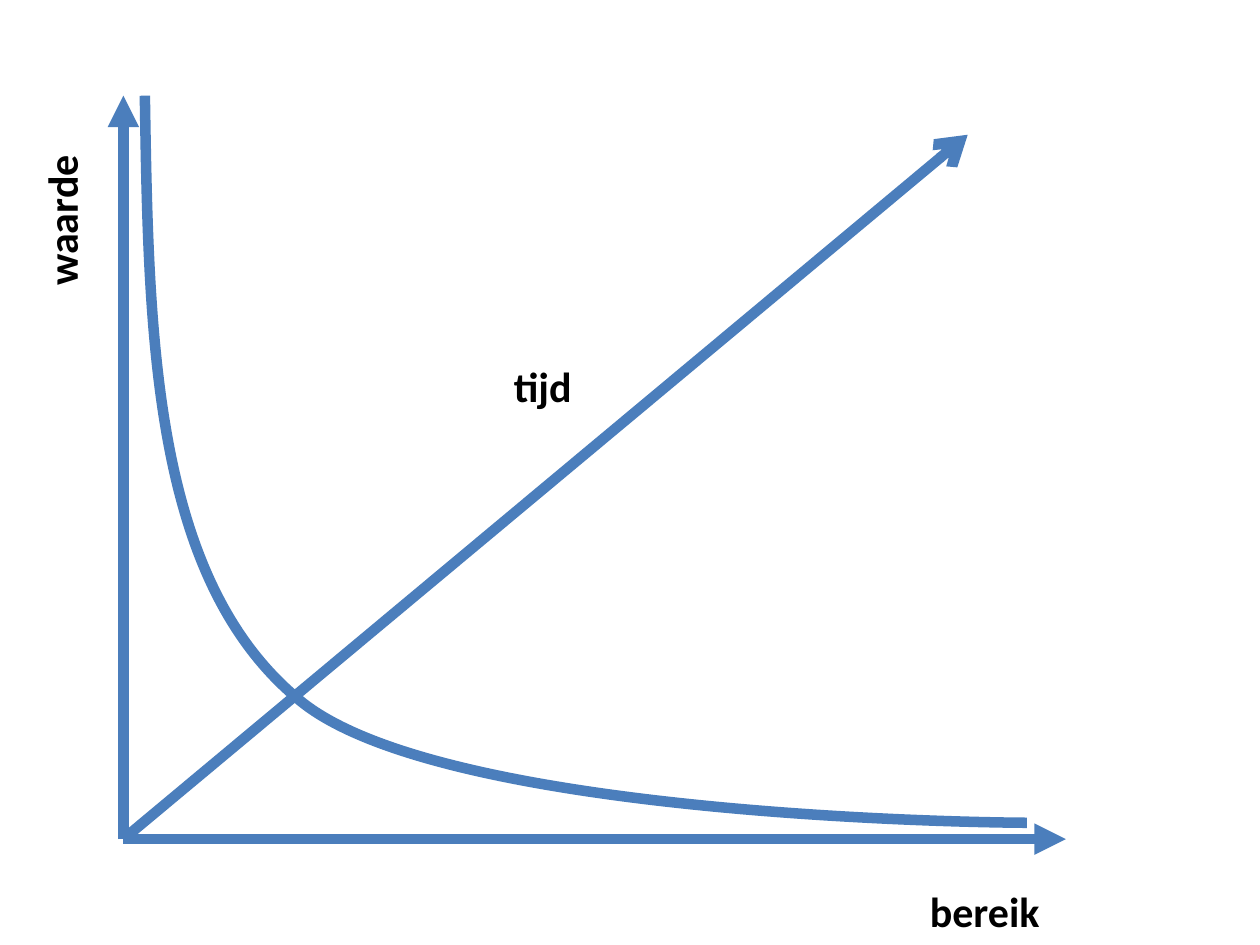
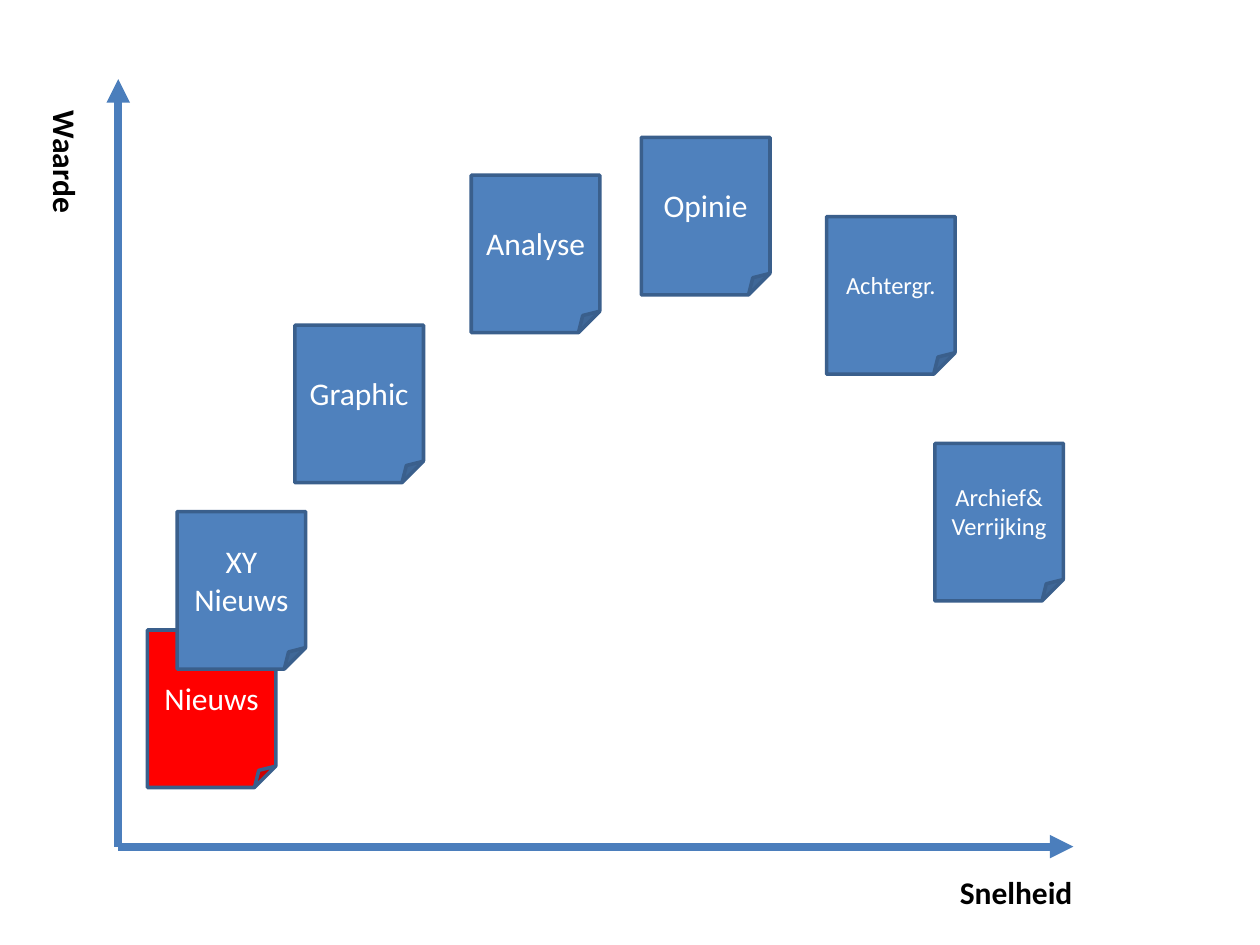
"""Build two axis diagrams: value against reach, and value against speed."""
from dataclasses import dataclass

from lxml.etree import SubElement
from pptx import Presentation
from pptx.dml.color import RGBColor
from pptx.enum.shapes import MSO_CONNECTOR, MSO_SHAPE
from pptx.enum.text import MSO_ANCHOR, MSO_AUTO_SIZE, PP_ALIGN
from pptx.oxml.ns import qn
from pptx.slide import Slide
from pptx.util import Pt

COLORS = {
    "line": "4B7EBC",
    "note": "4F81BD",
    "note_border": "3A5F8C",
    "news": "FF0000",
    "note_text": "FFFFFF",
    "label": "000000",
}
FONT = "Calibri"
NOTE_WIDTH, NOTE_HEIGHT = 73.5, 90


@dataclass(frozen=True)
class Arrow:
    start: tuple[float, float]
    end: tuple[float, float]
    width: float
    head: str = "triangle"


@dataclass(frozen=True)
class Label:
    text: str
    left: float
    top: float
    width: float
    height: float
    size: float
    rotation: float = 0


@dataclass(frozen=True)
class Note:
    text: str
    left: float
    top: float
    size: float = 18
    fill: str = "note"


REACH_ORIGIN = (70.5, 479.5)
REACH_ARROWS = [
    Arrow(REACH_ORIGIN, (70.5, 54.7), 6),
    Arrow(REACH_ORIGIN, (609.1, 479.5), 6),
    Arrow(REACH_ORIGIN, (553, 77), 6, "arrow"),
]
REACH_LABELS = [
    Label("bereik", 524.2, 502.6, 77.8, 36, 24),
    Label("waarde", -10, 107.3, 90, 36, 24, 270),
    Label("tijd", 286.6, 202.3, 48.2, 36, 24),
]
VALUE_CURVE = [
    (82.8, 54.7),
    (85, 193), (87.1, 331.2), (171.4, 400.3),
    (254.9, 469.4), (586.8, 470.2), (586.8, 470.2),
]

SPEED_ORIGIN = (67.6, 483.8)
SPEED_ARROWS = [
    Arrow(SPEED_ORIGIN, (67.6, 45.2), 4.5),
    Arrow(SPEED_ORIGIN, (613.4, 483.8), 4.5),
]
SPEED_LABELS = [
    Label("Snelheid", 541.4, 495.4, 79.2, 29, 18),
    Label("Waarde", 0.7, 78.5, 73.4, 29, 18, 90),
]
NOTES = [
    Note("Nieuws", 84.2, 360, fill="news"),
    Note("Achtergr.", 472.3, 123.8, 14),
    Note("Graphic", 168.5, 185.8),
    Note("Opinie", 366.5, 78.5),
    Note("Archief&\nVerrijking", 534.2, 253.4, 14),
    Note("XY\nNieuws", 101.2, 292.3),
    Note("Analyse", 269.3, 100.1),
]


def color(name: str) -> RGBColor:
    return RGBColor.from_string(COLORS[name])


def draw_arrow(slide: Slide, arrow: Arrow) -> None:
    ends = [Pt(value) for value in arrow.start + arrow.end]
    connector = slide.shapes.add_connector(MSO_CONNECTOR.STRAIGHT, *ends)
    connector.line.width = Pt(arrow.width)
    connector.line.color.rgb = color("line")
    properties = connector._element.spPr
    SubElement(properties.find(qn("a:ln")), qn("a:tailEnd"), type=arrow.head)
    SubElement(properties, qn("a:effectLst"))


def draw_label(slide: Slide, label: Label) -> None:
    box = slide.shapes.add_textbox(
        Pt(label.left), Pt(label.top), Pt(label.width), Pt(label.height)
    )
    box.rotation = label.rotation
    frame = box.text_frame
    frame.word_wrap = False
    frame.auto_size = MSO_AUTO_SIZE.SHAPE_TO_FIT_TEXT
    frame.text = label.text
    font = frame.paragraphs[0].font
    font.name, font.size, font.bold = FONT, Pt(label.size), True
    font.color.rgb = color("label")


def draw_note(slide: Slide, note: Note) -> None:
    shape = slide.shapes.add_shape(
        MSO_SHAPE.FOLDED_CORNER,
        Pt(note.left), Pt(note.top), Pt(NOTE_WIDTH), Pt(NOTE_HEIGHT),
    )
    shape.shadow.inherit = False
    shape.fill.solid()
    shape.fill.fore_color.rgb = color(note.fill)
    shape.line.color.rgb = color("note_border")
    shape.line.width = Pt(2)
    frame = shape.text_frame
    frame.vertical_anchor = MSO_ANCHOR.MIDDLE
    frame.text = note.text
    for paragraph in frame.paragraphs:
        paragraph.alignment = PP_ALIGN.CENTER
        paragraph.font.name = FONT
        paragraph.font.size = Pt(note.size)
        paragraph.font.color.rgb = color("note_text")


def draw_curve(slide: Slide, points: list[tuple[float, float]], width: float) -> None:
    start, *controls = [(Pt(x), Pt(y)) for x, y in points]
    builder = slide.shapes.build_freeform(*start)
    builder.add_line_segments(controls, close=False)
    shape = builder.convert_to_shape()
    shape.shadow.inherit = False
    shape.fill.background()
    shape.line.color.rgb = color("line")
    shape.line.width = Pt(width)
    outline = next(shape._element.iter(qn("a:path")))
    segments = outline.findall(qn("a:lnTo"))
    for first in range(0, len(segments), 3):
        bezier = SubElement(outline, qn("a:cubicBezTo"))
        for segment in segments[first:first + 3]:
            bezier.append(segment[0])
            outline.remove(segment)


def draw_axes(slide: Slide, arrows: list[Arrow], labels: list[Label]) -> None:
    for arrow in arrows:
        draw_arrow(slide, arrow)
    for label in labels:
        draw_label(slide, label)


def main() -> None:
    presentation = Presentation()
    presentation.slide_width, presentation.slide_height = Pt(720), Pt(540)
    blank = presentation.slide_layouts[6]

    reach_slide = presentation.slides.add_slide(blank)
    draw_axes(reach_slide, REACH_ARROWS, REACH_LABELS)
    draw_curve(reach_slide, VALUE_CURVE, 6)

    speed_slide = presentation.slides.add_slide(blank)
    draw_axes(speed_slide, SPEED_ARROWS, SPEED_LABELS)
    for note in NOTES:
        draw_note(speed_slide, note)

    presentation.save("out.pptx")


if __name__ == "__main__":
    main()
